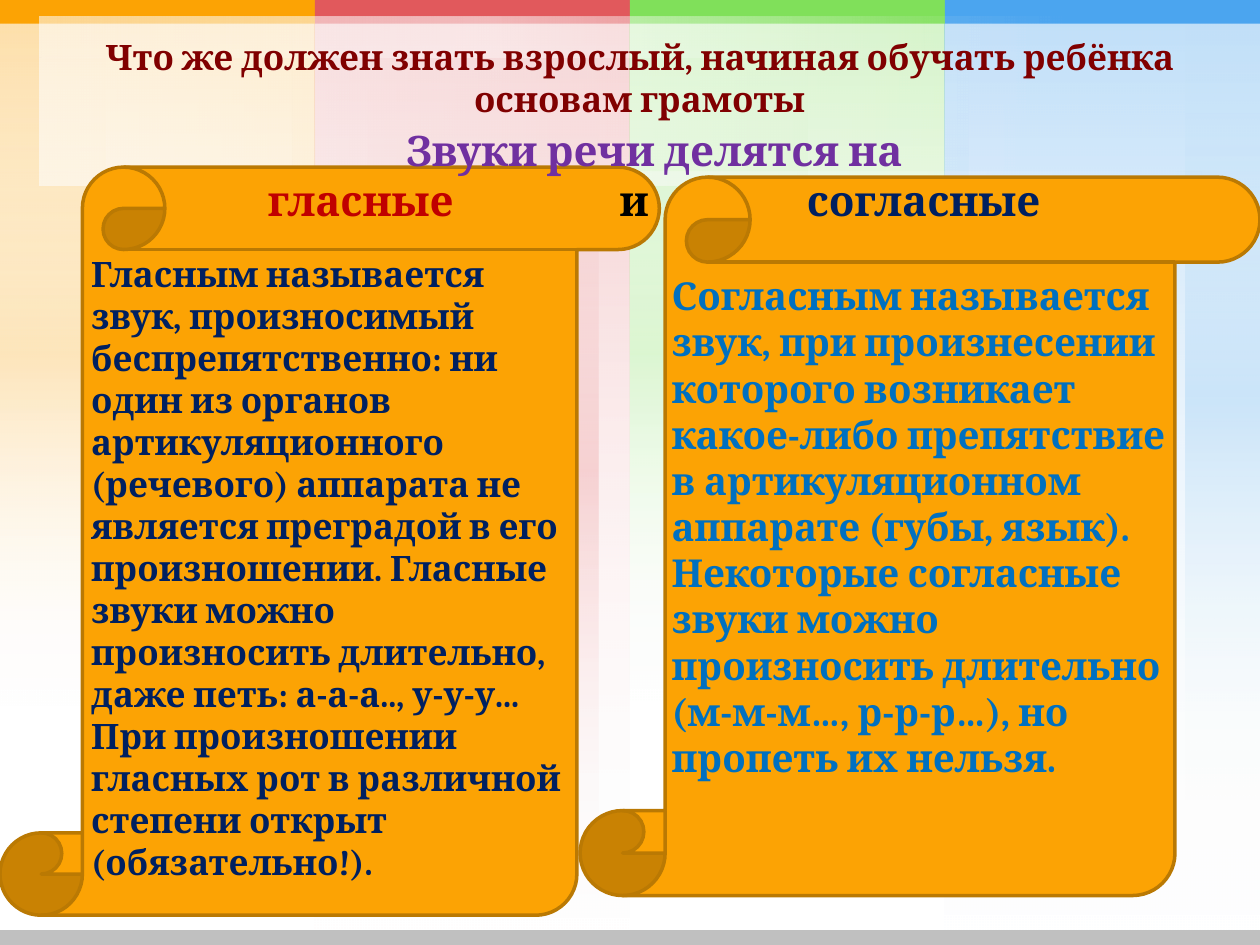
"""Build a slide that contrasts vowel and consonant sounds on two scrolls."""
from lxml import etree
from pptx import Presentation
from pptx.dml.color import RGBColor
from pptx.enum.shapes import MSO_SHAPE
from pptx.enum.text import MSO_AUTO_SIZE, PP_ALIGN
from pptx.oxml.ns import qn
from pptx.util import Pt

RECTANGLE = MSO_SHAPE.RECTANGLE
SCROLL = MSO_SHAPE.VERTICAL_SCROLL
GROW = MSO_AUTO_SIZE.SHAPE_TO_FIT_TEXT
LEFT, CENTER = PP_ALIGN.LEFT, PP_ALIGN.CENTER

WHITE = RGBColor(0xFF, 0xFF, 0xFF)
ORANGE = RGBColor(0xFC, 0xA3, 0x04)
CORAL = RGBColor(0xE1, 0x59, 0x5C)
GREEN = RGBColor(0x80, 0xE0, 0x5A)
BLUE = RGBColor(0x4B, 0xA5, 0xEF)
SILVER = RGBColor(0xC0, 0xC0, 0xC0)
BROWN = RGBColor(0xBA, 0x79, 0x03)
MAROON = RGBColor(0x80, 0x00, 0x00)
PURPLE = RGBColor(0x70, 0x30, 0xA0)
RED = RGBColor(0xC0, 0x00, 0x00)
BLACK = RGBColor(0x00, 0x00, 0x00)
NAVY = RGBColor(0x00, 0x20, 0x60)
AZURE = RGBColor(0x00, 0x70, 0xC0)

WIDTH, HEIGHT, COLUMN = 720, 540, 180
DOWN, ACROSS = 90, 0


class SlideBuilder:
    def __init__(self, slide):
        self.slide = slide
        self.font_format = {"name": "Cambria", "bold": True}

    def shape(self, kind, box, fill, line=None):
        shape = self.slide.shapes.add_shape(kind, *map(Pt, box))
        shape.shadow.inherit = False
        shape.fill.solid()
        shape.fill.fore_color.rgb = fill
        if line is None:
            shape.line.fill.background()
        else:
            shape.line.color.rgb = line
            shape.line.width = Pt(2)
        return shape

    def fade(self, box, colour, opacity, angle, peak_inside=False):
        shape = self.shape(RECTANGLE, box, colour)
        shape.fill.gradient()
        gradient = shape._element.spPr.find(qn("a:gradFill"))
        gradient.clear()
        stops = [(0, colour, opacity), (100, WHITE, 0)]
        if peak_inside:
            stops = [(0, WHITE, 0), (50, colour, opacity), (100, WHITE, 0)]
        stop_list = etree.SubElement(gradient, qn("a:gsLst"))
        for position, tint, alpha in stops:
            stop = etree.SubElement(stop_list, qn("a:gs"), pos=str(position * 1000))
            tone = etree.SubElement(stop, qn("a:srgbClr"), val=str(tint))
            etree.SubElement(tone, qn("a:alpha"), val=str(alpha * 1000))
        etree.SubElement(gradient, qn("a:lin"), ang=str(angle * 60000), scaled="0")

    def text(self, box, size, paragraphs, align=LEFT):
        frame = self.slide.shapes.add_textbox(*map(Pt, box)).text_frame
        frame.word_wrap = True
        frame.auto_size = GROW
        for index, runs in enumerate(paragraphs):
            paragraph = frame.add_paragraph() if index else frame.paragraphs[0]
            paragraph.alignment = align
            for wording, colour in runs:
                run = paragraph.add_run()
                run.text = wording
                for name, value in {**self.font_format, "size": Pt(size)}.items():
                    setattr(run.font, name, value)
                run.font.color.rgb = colour
        return frame

    def tab_stops(self, paragraph, positions):
        tabs = etree.SubElement(paragraph._p.get_or_add_pPr(), qn("a:tabLst"))
        for position in positions:
            etree.SubElement(tabs, qn("a:tab"), pos=str(Pt(position)), algn="l")


def draw_background(builder):
    columns = [
        (CORAL, 180, 540, [(210, 132, 540)]),
        (GREEN, 360, 405, [(360, 101.5, 405)]),
        (BLUE, 540, 538, [(540, 13.5, 459), (677.5, 42.5, 459)]),
        (ORANGE, 0, 405, [(167, 13, 405), (0, 60.5, 405)]),
    ]
    for colour, left, height, bands in columns:
        column = (left, 0, COLUMN, height)
        if colour != BLUE:
            builder.fade(column, colour, 20, DOWN)
            for band_left, width, band_height in bands:
                builder.fade((band_left, 0, width, band_height), colour, 20, DOWN, True)
        else:
            for band_left, width, band_height in bands:
                builder.fade((band_left, 0, width, band_height), colour, 20, DOWN, True)
            builder.fade(column, colour, 20, DOWN)
        builder.fade(column, colour, 20, DOWN)
    for index, colour in enumerate((ORANGE, CORAL, GREEN, BLUE)):
        builder.shape(RECTANGLE, (index * COLUMN, 0, COLUMN, 13.5), colour)

    title_panel = (22.5, 9.75, 594, 96.5)
    for box, peak_inside in [
        ((22.5, 98, 666, 8), True),
        (title_panel, False),
        ((22.5, 9.75, 507, 23), True),
        (title_panel, False),
    ]:
        builder.fade(box, WHITE, 35, ACROSS, peak_inside)
    builder.shape(RECTANGLE, (0, 531.5, WIDTH, 8.5), SILVER)


def main():
    presentation = Presentation()
    presentation.slide_width, presentation.slide_height = Pt(WIDTH), Pt(HEIGHT)
    builder = SlideBuilder(presentation.slides.add_slide(presentation.slide_layouts[6]))
    draw_background(builder)

    for scroll in [(331.5, 101.25, 388.5, 410.5), (0, 95.5, 376.75, 427.5)]:
        builder.shape(SCROLL, scroll, ORANGE, BROWN)

    builder.text((22.5, 16.5, 686, 55.5), 20, [
        [("Что же должен знать взрослый, начиная обучать ребёнка основам грамоты", MAROON)],
    ], CENTER)

    sounds = builder.text((28, 67.5, 692, 65.5), 24, [
        [("Звуки речи делятся на", PURPLE)],
        [("\tгласные", RED), ("\tи", BLACK), ("\tсогласные", NAVY)],
    ], CENTER)
    sound_kinds = sounds.paragraphs[1]
    sound_kinds.alignment = LEFT
    builder.tab_stops(sound_kinds, (118, 319, 426))

    builder.text((45, 140.5, 286.5, 371), 20, [
        [("Гласным называется звук, произносимый беспрепятственно: ни один из органов "
          "артикуляционного (речевого) аппарата не является преградой в его произношении. "
          "Гласные звуки можно произносить длительно, даже петь: а-а-а.., у-у-у... "
          "При произношении гласных рот в различной степени открыт (обязательно!).", NAVY)],
    ])
    builder.text((376.75, 152, 309.5, 300), 22, [
        [("Согласным называется звук, при произнесении которого возникает какое-либо "
          "препятствие в артикуляционном аппарате (губы, язык).", AZURE)],
        [("Некоторые согласные звуки можно произносить длительно (м-м-м…, р-р-р…), "
          "но пропеть их нельзя.", AZURE)],
    ])
    presentation.save("out.pptx")


if __name__ == "__main__":
    main()
